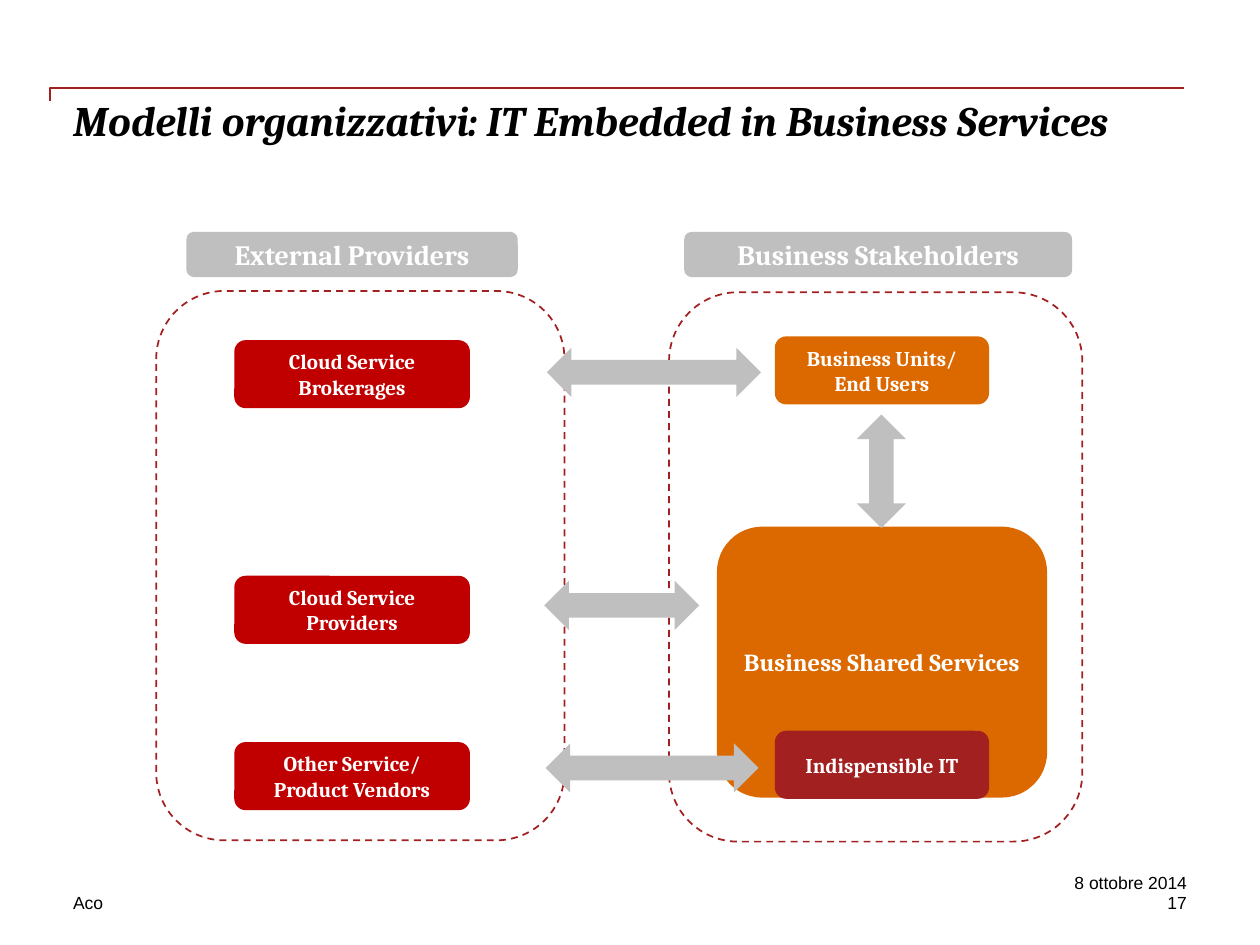
import collections

import pptx
import pptx.dml.color
import pptx.enum.dml
import pptx.enum.shapes
import pptx.enum.text
import pptx.util

SHAPES = pptx.enum.shapes.MSO_SHAPE
ALIGN = pptx.enum.text.PP_ALIGN
ANCHOR = pptx.enum.text.MSO_ANCHOR

# The slide is a grid of 100 columns by 75 rows.
COLUMNS, ROWS = 100, 75
CELL = pptx.util.Inches(0.1)

CRIMSON, RED, ORANGE = "A32020", "C00000", "DC6900"
GREY, WHITE, BLACK = "BFBFBF", "FFFFFF", "000000"
HEADING_FONT, FOOTER_FONT = "Cambria", "Arial"

Box = collections.namedtuple("Box", "left top width height")


def inside(box, left, top, width, height):
    """Return a box whose corner is counted from the corner of another."""
    return Box(box.left + left, box.top + top, width, height)


def emu(box):
    return [round(length * CELL) for length in box]


def rgb(hex_string):
    return pptx.dml.color.RGBColor.from_string(hex_string)


def write(frame, text, size, font, color, align, anchor=ANCHOR.TOP,
          insets=(0, 0), bold=False, italic=False):
    """Fill a text frame; insets are horizontal and vertical, in inches."""
    frame.word_wrap = True
    frame.auto_size = pptx.enum.text.MSO_AUTO_SIZE.NONE
    frame.vertical_anchor = anchor
    frame.margin_left = frame.margin_right = pptx.util.Inches(insets[0])
    frame.margin_top = frame.margin_bottom = pptx.util.Inches(insets[1])
    paragraph = frame.paragraphs[0]
    paragraph.alignment = align
    run = paragraph.add_run()
    run.text = text
    run.font.size = pptx.util.Pt(size)
    run.font.name = font
    run.font.bold = bold
    run.font.italic = italic
    run.font.color.rgb = rgb(color)


def add_filled(slide, preset, box, color):
    shape = slide.shapes.add_shape(preset, *emu(box))
    shape.shadow.inherit = False
    shape.fill.solid()
    shape.fill.fore_color.rgb = rgb(color)
    shape.line.fill.background()
    return shape


def outline(shape, color):
    shape.shadow.inherit = False
    shape.fill.background()
    shape.line.color.rgb = rgb(color)
    shape.line.width = pptx.util.Pt(1)


def add_header(slide, box, text):
    header = add_filled(slide, SHAPES.ROUNDED_RECTANGLE, box, GREY)
    write(header.text_frame, text, 16, HEADING_FONT, WHITE, ALIGN.CENTER,
          insets=(0.05, 0.03), bold=True)


def add_frame(slide, box):
    frame = slide.shapes.add_shape(SHAPES.ROUNDED_RECTANGLE, *emu(box))
    outline(frame, CRIMSON)
    frame.line.dash_style = pptx.enum.dml.MSO_LINE.DASH


def add_role(slide, box, text, color, size=12):
    role = add_filled(slide, SHAPES.ROUNDED_RECTANGLE, box, color)
    write(role.text_frame, text, size, HEADING_FONT, WHITE, ALIGN.CENTER,
          ANCHOR.MIDDLE, insets=(0.11, 0.05), bold=True)


def add_arrow(slide, preset, box):
    arrow = add_filled(slide, preset, box, GREY)
    arrow.adjustments[0] = 0.5
    arrow.adjustments[1] = 0.5


def build_title(slide, box):
    rule = slide.shapes.build_freeform(
        box.left, box.top + 1.6, scale=float(CELL))
    rule.add_line_segments(
        [(box.left, box.top), (box.left + box.width, box.top)], close=False)
    outline(rule.convert_to_shape(), CRIMSON)

    title = slide.shapes.title
    title.left, title.top, title.width, title.height = emu(
        inside(box, 1.6, 0.8, box.width - 1.7, box.height - 0.8))
    write(title.text_frame,
          "Modelli organizzativi: IT Embedded in Business Services",
          24, HEADING_FONT, BLACK, ALIGN.LEFT, bold=True, italic=True)


def build_providers(slide, box):
    add_frame(slide, inside(box, 0, 4.7, box.width, box.height - 4.7))
    add_header(slide, inside(box, 2.4, 0, 26.3, 3.6), "External Providers")
    providers = [
        (8.6, "Cloud Service Brokerages"),
        (27.3, "Cloud Service Providers"),
        (40.5, "Other Service/ Product Vendors"),
    ]
    for top, provider in providers:
        add_role(slide, inside(box, 6.2, top, 18.7, 5.4), provider, RED)


def build_stakeholders(slide, box):
    add_frame(slide, inside(box, 0, 4.8, box.width, box.height - 4.8))
    add_header(slide, inside(box, 1.2, 0, 30.8, 3.6), "Business Stakeholders")
    add_role(slide, inside(box, 8.4, 8.3, 17, 5.4),
             "Business Units/ End Users", ORANGE)
    add_role(slide, inside(box, 3.8, 23.4, 26.2, 21.5),
             "Business Shared Services", ORANGE, size=14)
    add_role(slide, inside(box, 8.4, 39.6, 17, 5.4),
             "Indispensible IT", CRIMSON)


def build_exchanges(slide, box):
    """Link providers with stakeholders, and users with shared services."""
    for left, top, length in [(0.2, 0, 17), (0, 18.5, 12.3), (0.1, 31.4, 16.9)]:
        add_arrow(slide, SHAPES.LEFT_RIGHT_ARROW,
                  inside(box, left, top, length, 3.9))
    add_arrow(slide, SHAPES.UP_DOWN_ARROW, inside(box, 24.8, 5.3, 3.9, 9))


def build_footer(slide, box):
    notes = [
        (0, 1.6, 28.3, "Aco", ALIGN.LEFT),
        (box.width - 16.7, 1.6, 16.7, "17", ALIGN.RIGHT),
        (box.width - 16.7, 0, 16.7, "8 ottobre 2014", ALIGN.RIGHT),
    ]
    for left, top, width, text, align in notes:
        note = slide.shapes.add_textbox(
            *emu(inside(box, left, top, width, 1.7)))
        write(note.text_frame, text, 10, FOOTER_FONT, BLACK, align)


def main():
    deck = pptx.Presentation()
    deck.slide_width = COLUMNS * CELL
    deck.slide_height = ROWS * CELL
    slide = deck.slides.add_slide(deck.slide_layouts.get_by_name("Title Only"))
    build_title(slide, Box(4.2, 6.7, 90, 10.8))
    build_providers(slide, Box(12.4, 18.4, 32.4, 48.3))
    build_stakeholders(slide, Box(53.1, 18.4, 32.8, 48.4))
    build_exchanges(slide, Box(43.2, 27.6, 28.7, 35.3))
    build_footer(slide, Box(5.8, 69.2, 88.4, 3.3))
    deck.save("out.pptx")


if __name__ == "__main__":
    main()
